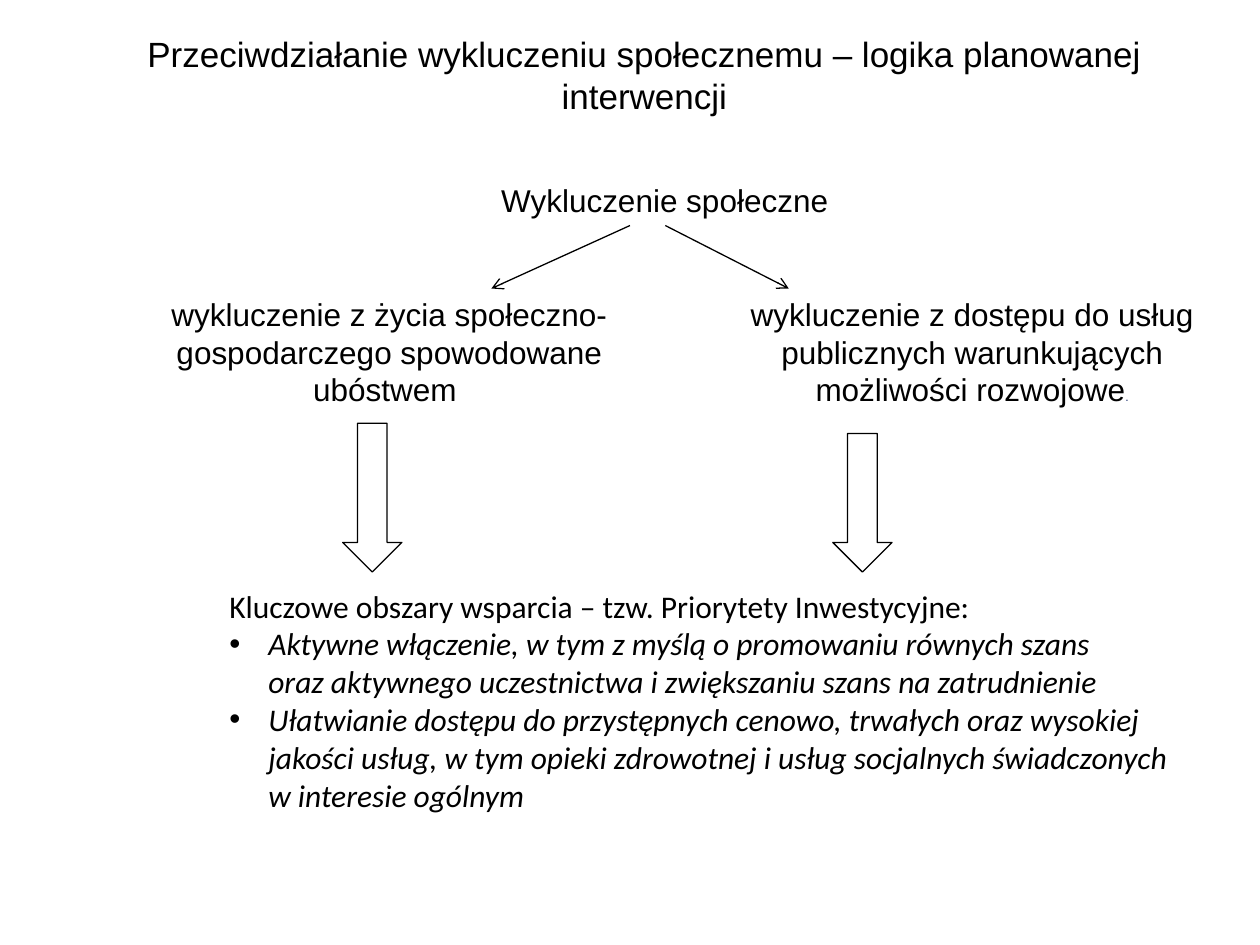
"""Builds a one-slide diagram of the logic of a social exclusion intervention."""
from dataclasses import dataclass

from lxml import etree
from pptx import Presentation, util as u
from pptx.dml.color import RGBColor
from pptx.enum import shapes, text
from pptx.oxml.ns import qn

COLS, ROWS = 100, 75
WIDTH, HEIGHT = u.Inches(10), u.Inches(7.5)
BLACK, NAVY = "000000", "2C3F77"


@dataclass
class Box:
    """A rectangle in grid columns and rows."""
    x: float
    y: float
    w: float
    h: float


@dataclass
class Run:
    """A piece of text and its format."""
    words: str
    size: float = 18
    font: str = "Arial"
    color: str = BLACK
    italic: bool = False


@dataclass
class Label:
    """A centred text and its place."""
    box: Box
    runs: list[Run]


@dataclass
class Item:
    """A line of the list, bulleted or not."""
    run: Run
    bullet: bool = True


TITLE = Label(Box(5.1, 2.1, 92.1, 7.7), [
    Run("Przeciwdziałanie wykluczeniu społecznemu – logika planowanej interwencji", 20)])
LABELS = [
    Label(Box(23.2, 13.9, 59.1, 4), [Run("Wykluczenie społeczne")]),
    Label(Box(10.6, 22.9, 40.6, 10.1), [
        Run("wykluczenie z życia społeczno-gospodarczego spowodowane ubóstwem ")]),
    Label(Box(56.2, 22.9, 41.9, 11.3), [
        Run("wykluczenie z dostępu do usług publicznych warunkujących możliwości rozwojowe"),
        Run(".", 7, color=NAVY)]),
]
LIST_BOX = Box(17.2, 46.05, 76.5, 19.2)
ITEMS = [
    Item(Run("Kluczowe obszary wsparcia – tzw. Priorytety Inwestycyjne:", font="Calibri"), False),
    Item(Run("Aktywne włączenie, w tym z myślą o promowaniu równych szans \v"
             "oraz aktywnego uczestnictwa i zwiększaniu szans na zatrudnienie",
             font="Calibri", italic=True)),
    Item(Run("Ułatwianie dostępu do przystępnych cenowo, trwałych oraz wysokiej jakości usług, "
             "w tym opieki zdrowotnej i usług socjalnych świadczonych w interesie ogólnym",
             font="Calibri", italic=True)),
]
BRANCH_TOP, BRANCH_BOTTOM = 17.9, 22.9
BRANCHES = [(50, 39), (52.8, 62.6)]
DOWN_ARROWS = [Box(27.2, 33.6, 4.7, 11.8), Box(66.1, 34.4, 4.7, 11)]


def col(n: float) -> int:
    """Turn grid columns into a length."""
    return round(WIDTH * n / COLS)


def row(n: float) -> int:
    """Turn grid rows into a length."""
    return round(HEIGHT * n / ROWS)


def extent(box: Box) -> tuple[int, int, int, int]:
    """Give left, top, width and height of a box."""
    return col(box.x), row(box.y), col(box.w), row(box.h)


def rgb(value: str) -> RGBColor:
    """Make a colour from a hex string."""
    return RGBColor.from_string(value)


def set_all(obj, values: dict) -> None:
    """Set attributes from a dict of format values."""
    for name, value in values.items():
        setattr(obj, name, value)


def format_run(r, run: Run) -> None:
    """Give a text run its font."""
    set_all(r.font, {"size": u.Pt(run.size), "name": run.font, "italic": run.italic})
    r.font.color.rgb = rgb(run.color)


def prepare(sp, box: Box):
    """Place a text shape and return its text frame."""
    set_all(sp, dict(zip(("left", "top", "width", "height"), extent(box))))
    set_all(sp.text_frame, {"word_wrap": True, "auto_size": text.MSO_AUTO_SIZE.NONE,
                            "vertical_anchor": text.MSO_ANCHOR.TOP})
    return sp.text_frame


def fill_label(sp, label: Label) -> None:
    """Write a centred label into a text shape."""
    p = prepare(sp, label.box).paragraphs[0]
    p.alignment = text.PP_ALIGN.CENTER
    for run in label.runs:
        r = p.add_run()
        r.text = run.words
        format_run(r, run)


def fill_list(sp, items: list[Item]) -> None:
    """Write the list into the body placeholder."""
    tf = prepare(sp, LIST_BOX)
    for i, item in enumerate(items):
        p = tf.add_paragraph() if i else tf.paragraphs[0]
        p.text = item.run.words
        set_all(p, {"space_before": u.Pt(0), "alignment": text.PP_ALIGN.LEFT})
        for r in p.runs:
            format_run(r, item.run)
        pPr = p._p.get_or_add_pPr()
        indent = u.Inches(0.31) if item.bullet else 0
        pPr.set("marL", str(indent))
        pPr.set("indent", str(-indent))
        if item.bullet:
            etree.SubElement(pPr, qn("a:buFont")).set("typeface", "Arial")
            etree.SubElement(pPr, qn("a:buChar")).set("char", "•")
        else:
            etree.SubElement(pPr, qn("a:buNone"))


def outline(sp) -> None:
    """Give a shape or connector a thin black line."""
    sp.line.color.rgb = rgb(BLACK)
    sp.line.width = u.Pt(0.75)


def add_branch(s, start: float, end: float) -> None:
    """Draw a thin arrow from the main topic to a branch."""
    sp = s.shapes.add_connector(shapes.MSO_CONNECTOR.STRAIGHT, col(start), row(BRANCH_TOP),
                                col(end), row(BRANCH_BOTTOM))
    outline(sp)
    etree.SubElement(sp.line._get_or_add_ln(), qn("a:tailEnd")).set("type", "arrow")
    etree.SubElement(sp._element.spPr, qn("a:effectLst"))


def add_down_arrow(s, box: Box) -> None:
    """Draw a hollow block arrow."""
    sp = s.shapes.add_shape(shapes.MSO_SHAPE.DOWN_ARROW, *extent(box))
    sp.shadow.inherit = False
    sp.fill.background()
    outline(sp)


def main() -> None:
    """Build and save the slide."""
    prs = Presentation()
    set_all(prs, {"slide_width": WIDTH, "slide_height": HEIGHT})
    s = prs.slides.add_slide(prs.slide_layouts[1])
    fill_label(s.shapes.title, TITLE)
    fill_list(s.placeholders[1], ITEMS)
    for label in LABELS:
        fill_label(s.shapes.add_textbox(*extent(label.box)), label)
    for start, end in BRANCHES:
        add_branch(s, start, end)
    for box in DOWN_ARROWS:
        add_down_arrow(s, box)
    prs.save("out.pptx")


if __name__ == "__main__":
    main()
